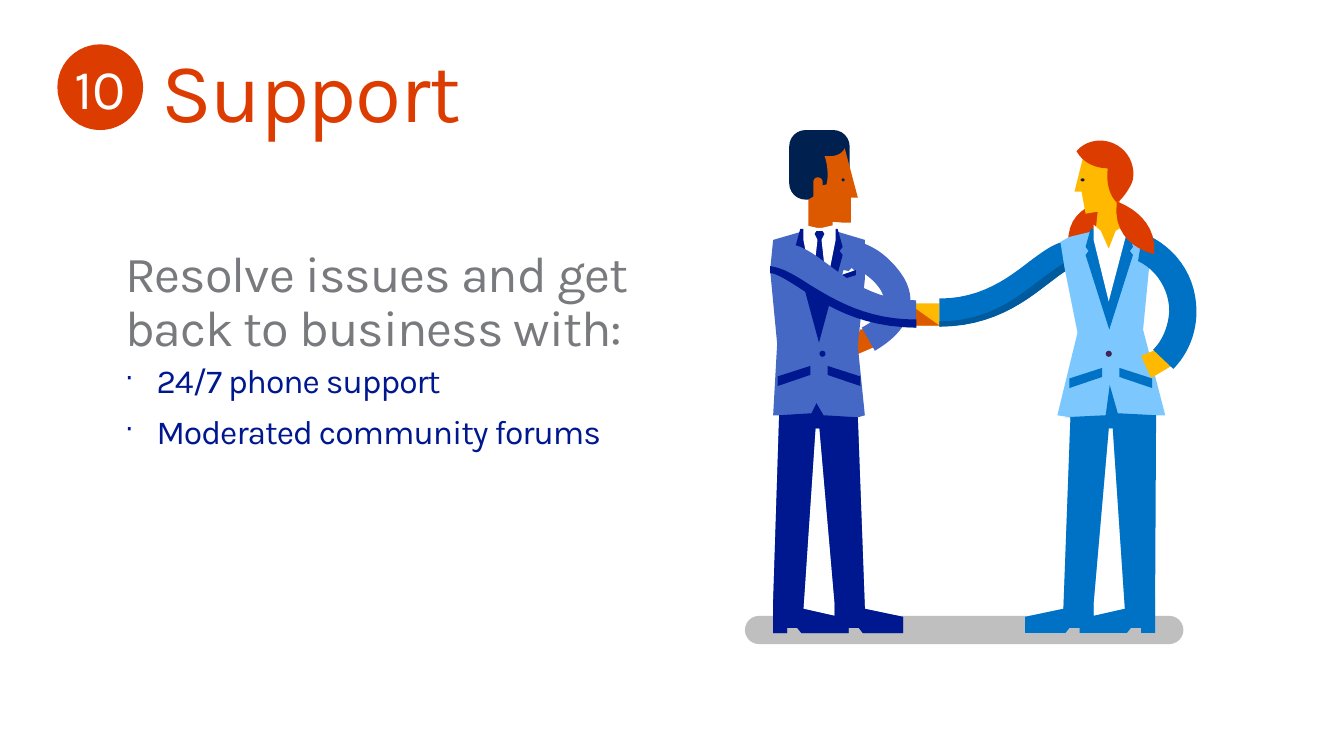
from collections import namedtuple
from dataclasses import dataclass

from lxml.etree import SubElement
from pptx import Presentation
from pptx.dml.color import RGBColor
from pptx.enum.shapes import MSO_SHAPE as Preset
from pptx.enum.text import MSO_ANCHOR as Anchor, PP_ALIGN as Align
from pptx.oxml.ns import qn
from pptx.util import Pt

Box = namedtuple("Box", "left top width height")


@dataclass(frozen=True)
class Theme:
    font: str = "Karla"
    title_size: int = 60
    badge_size: int = 40
    lead_size: int = 36
    item_size: int = 24
    red: str = "DC3C00"
    grey: str = "797A7D"
    floor: str = "BFBFBF"
    white: str = "FFFFFF"
    navy: str = "00188F"
    midnight: str = "002050"
    indigo: str = "4668C5"
    brown: str = "DD5900"
    gold: str = "FFB900"
    blue: str = "0072C6"
    deep_blue: str = "005A9E"
    sky: str = "7DC7FF"
    ink: str = "171A4E"
    plum: str = "442359"


THEME = Theme()
GRID_WIDTH = 500
CURVE_STEPS = 12
MIRROR_AXIS = 256.5
LEGS = [(67, 498), (67, 528), (81, 528), (81, 523), (91, 523), (95, 528), (142, 528), (142, 523),
        (152, 523), (156, 528), (196, 528), (196, 512), (158, 504), (151, 314)]
LEG_GAP = [(97, 504), (109, 325), (113, 325), (128, 498), (128, 511)]
SLEEVE_EDGE = [(0, 0), (50, 0, 82, 23, 104, 40), (115, 48, 124, 56, 130, 56)]
SLEEVE = [*SLEEVE_EDGE, (130, 83), (115, 83, 103, 74, 88, 63), (67, 47, 41, 27, 0, 27)]


def transform(outline, origin=(0, 0), scale=(1, 1)):
    return [tuple(origin[i % 2] + scale[i % 2] * value for i, value in enumerate(knots))
            for knots in outline]


def mirror(outline, axis):
    return transform(outline, (2 * axis, 0), (-1, 1))


def flatten(outline):
    points = []
    for knots in outline:
        if len(knots) == 2:
            points.append(knots)
            continue
        xs, ys = (points[-1][axis:axis + 1] + knots[axis::2] for axis in (0, 1))
        for step in range(1, CURVE_STEPS + 1):
            t = step / CURVE_STEPS
            weights = ((1 - t) ** 3, 3 * t * (1 - t) ** 2, 3 * t * t * (1 - t), t ** 3)
            points.append(tuple(sum(w * v for w, v in zip(weights, line)) for line in (xs, ys)))
    return points


def paint(shape, colour):
    shape.shadow.inherit = False
    shape.fill.solid()
    shape.fill.fore_color.rgb = RGBColor.from_string(colour)
    shape.line.fill.background()


class Sketch:
    def __init__(self, slide, box):
        self.shapes = slide.shapes
        self.box = box
        self.unit = box.width / GRID_WIDTH

    def locate(self, x, y):
        return Pt(self.box.left + x * self.unit), Pt(self.box.top + y * self.unit)

    def preset(self, colour, kind, left, top, width, height):
        shape = self.shapes.add_shape(kind, *self.locate(left, top),
                                      Pt(width * self.unit), Pt(height * self.unit))
        paint(shape, colour)
        return shape

    def outline(self, colour, *contours):
        first, *others = [[self.locate(*point) for point in flatten(c)] for c in contours]
        builder = self.shapes.build_freeform(*first[0])
        builder.add_line_segments(first[1:])
        for contour in others:
            builder.move_to(*contour[0])
            builder.add_line_segments(contour[1:])
        paint(builder.convert_to_shape(), colour)


def draw_lapels(sketch, colour, axis, tip):
    half = [(axis - 18.5, 127), (axis - 23.5, 145), (axis - 20.5, 149), (axis - 23.5, 153)]
    sketch.outline(colour, [*half, (axis, tip), *reversed(mirror(half, axis))])


def draw_pockets(sketch, colour, axis, top):
    outer, inner = axis - 41, axis - 8.5
    flap = [(outer, top + 20), (inner, top + 9), (inner, top), (outer, top + 10.5)]
    for side in (flap, mirror(flap, axis)):
        sketch.outline(colour, side)


def draw_button(sketch, colour, centre):
    sketch.preset(colour, Preset.OVAL, centre - 3, 248, 6, 6)


def draw_man(sketch):
    axis = 112.5
    hair = sketch.preset(THEME.midnight, Preset.ROUNDED_RECTANGLE, 83, 29, 60, 69)
    hair.adjustments[0] = 0.27
    ear = [(116, 84), (116, 80), (116, 78, 114, 76, 111, 76), (109, 76, 107, 78, 107, 80)]
    face = [(138, 47), (136, 52, 130, 55, 123, 55), (118, 55), (121, 62, 122, 75, 120, 83)]
    neck_and_nose = [(107, 95), (102, 98), (102, 131), (126, 131), (126, 120), (137, 121),
                     (144, 121), (144, 96), (151, 96)]
    sketch.outline(THEME.brown, face + ear + neck_and_nose)
    sketch.preset(THEME.midnight, Preset.OVAL, 135, 77, 3, 3)

    hip_hand = [(168, 244), (147, 253), (153, 227), (168, 225)]
    sketch.outline(THEME.brown, hip_hand)
    jacket = [(158, 312), (151, 243), (158, 177), (158, 138), (128, 129), (98, 129),
              (67, 138), (64, 168), (71, 241), (67, 312), (73, 312)]
    sketch.outline(THEME.indigo, LEGS + jacket, LEG_GAP)
    waist = [(117, 312), (110, 300), (105, 310), (73, 312)]
    sketch.outline(THEME.navy, LEGS + waist, LEG_GAP)

    draw_lapels(sketch, THEME.navy, axis, 240)
    handkerchief = [(135, 175), (137, 168), (142, 169), (145, 166), (148, 169), (141, 173)]
    breast_pocket = [(120, 178), (149, 168), (149, 173), (120, 182)]
    sketch.outline(THEME.white, handkerchief)
    sketch.outline(THEME.navy, breast_pocket)
    draw_pockets(sketch, THEME.navy, axis, 263)
    draw_button(sketch, THEME.navy, 116)

    bent_arm = [(168, 248), (155, 225), (172, 216, 179, 206, 177, 196),
                (174, 180, 151, 166, 146, 166), (136, 141), (147, 136, 160, 142, 170, 148),
                (181, 155, 191, 166, 197, 176), (204, 188, 205, 201, 201, 213),
                (196, 227, 185, 238, 168, 248)]
    sketch.outline(THEME.indigo, bent_arm)
    shirt_half = [(110, 126), (97, 123), (97, 138), (106, 183), (111, 138), (108, 132), (110, 129)]
    sketch.outline(THEME.white, shirt_half + mirror(shirt_half, 113)[::-1])

    cuff = (209, 225)
    underside = [(145, 61), (145, 54), (139, 54, 128, 47, 117, 40), (91, 23, 56, 0, 0, 0),
                 (0, 8), (49, 8, 80, 27, 105, 42), (119, 51, 131, 59, 145, 61)]
    for colour, part in ((THEME.indigo, SLEEVE), (THEME.navy, underside)):
        sketch.outline(colour, transform(part, cuff, (-1, -1)))


def draw_woman(sketch):
    axis = 400.5
    ponytail_tip = [(360, 143), (357, 104, 396, 100, 396, 100), (399, 140, 360, 143, 360, 143)]
    sketch.outline(THEME.red, ponytail_tip)

    cuff, sleeve_scale = (232, 224), (1.02, -1.03)
    underside = [*SLEEVE_EDGE, (130, 65), (119, 61, 109, 53, 99, 46), (75, 27, 46, 5, 0, 5)]
    for colour, part in ((THEME.blue, SLEEVE), (THEME.deep_blue, underside)):
        sketch.outline(colour, transform(part, cuff, sleeve_scale))

    legs, leg_gap = mirror(LEGS, MIRROR_AXIS), mirror(LEG_GAP, MIRROR_AXIS)
    jacket = [(349, 312), (369, 230), (356, 165), (352, 140), (361, 135), (386, 129),
              (415, 129), (443, 135), (434, 227), (456, 312), (440, 312)]
    sketch.outline(THEME.sky, legs + jacket, leg_gap)
    hip_hand = [(464, 262), (442, 275), (432, 253), (454, 244)]
    sketch.outline(THEME.gold, hip_hand)
    face_and_neck = [(415, 81), (415, 59, 397, 50, 376, 50), (366, 90), (373, 90), (377, 112),
                     (389, 110), (387, 129), (397, 172), (411, 129), (411, 98),
                     (414, 93, 415, 87, 415, 81)]
    sketch.outline(THEME.gold, face_and_neck)
    sketch.preset(THEME.ink, Preset.OVAL, 372, 77, 4, 3)
    waist = [(356, 314), (397, 312), (401, 282), (409, 310), (447, 312)]
    sketch.outline(THEME.blue, legs + waist, leg_gap)

    neckline = [(377, 145), (382, 127), (387, 127), (400, 170), (411, 127), (419, 127), (424, 145),
                (421, 149), (424, 153), (axis, 227), (377, 153), (380, 149)]
    sketch.outline(THEME.blue, neckline)
    shirt = [(407, 129), (400, 147), (392, 129), (385, 123), (385, 138), (400, 199),
             (416, 138), (421, 121)]
    sketch.outline(THEME.white, shirt)
    bent_arm = [(464, 266), (444, 247), (454, 237, 459, 223, 460, 209),
                (460, 188, 448, 168, 429, 159), (433, 135), (444, 136),
                (471, 151, 487, 178, 487, 209), (487, 230, 479, 251, 464, 266)]
    sketch.outline(THEME.blue, bent_arm)
    draw_pockets(sketch, THEME.blue, 402, 265)
    draw_button(sketch, THEME.plum, 400)

    fringe = [(368, 50), (375, 42, 386, 38, 397, 40), (415, 43, 427, 60, 424, 78),
              (423, 84, 413, 99, 408, 101), (408, 101, 396, 91, 399, 67),
              (399, 67, 378, 68, 368, 50)]
    ponytail = [(408, 100), (408, 100, 449, 113, 445, 152), (445, 152, 402, 144, 408, 100)]
    for hair in (fringe, ponytail):
        sketch.outline(THEME.red, hair)


def add_handshake_scene(slide, box):
    sketch = Sketch(slide, box)
    ground = sketch.preset(THEME.floor, Preset.ROUNDED_RECTANGLE, 39, 511, 435, 28)
    ground.adjustments[0] = 0.5
    sketch.preset(THEME.gold, Preset.RECTANGLE, 208, 201, 24, 22)
    sketch.outline(THEME.brown, [(232, 223), (208, 223), (208, 206)])
    draw_woman(sketch)
    draw_man(sketch)


def style(paragraph, size, colour, tracking=0):
    paragraph.font.name = THEME.font
    paragraph.font.size = Pt(size)
    paragraph.font.color.rgb = RGBColor.from_string(colour)
    for run in paragraph.runs:
        run._r.get_or_add_rPr().set("spc", str(round(tracking * 100)))


def clear_margins(frame):
    frame.word_wrap = True
    frame.margin_left = frame.margin_right = frame.margin_top = frame.margin_bottom = 0


def add_text_frame(slide, box):
    frame = slide.shapes.add_textbox(*map(Pt, box)).text_frame
    clear_margins(frame)
    return frame


def add_heading(slide, box, number, title):
    diameter, indent = 61.2, 74.2
    badge = slide.shapes.add_shape(Preset.OVAL, *map(Pt, (box.left, box.top, diameter, diameter)))
    paint(badge, THEME.red)
    clear_margins(badge.text_frame)
    badge.text_frame.vertical_anchor = Anchor.MIDDLE
    numeral = badge.text_frame.paragraphs[0]
    numeral.text, numeral.alignment = number, Align.CENTER
    style(numeral, THEME.badge_size, THEME.white)
    frame = add_text_frame(slide, Box(box.left + indent, box.top + 4.3, box.width - indent, 59))
    heading = frame.paragraphs[0]
    heading.text, heading.line_spacing = title, 0.9
    style(heading, THEME.title_size, THEME.red, -1)


def add_benefits(slide, box, lead_text, items):
    frame = add_text_frame(slide, box)
    lead = frame.paragraphs[0]
    lead.text, lead.line_spacing = lead_text, 0.9
    style(lead, THEME.lead_size, THEME.grey, -0.7)
    for item in items:
        benefit = frame.add_paragraph()
        benefit.text, benefit.line_spacing = item, 0.9
        benefit.space_before, benefit.space_after = Pt(4.8), Pt(6)
        properties = benefit._p.get_or_add_pPr()
        properties.set("marL", str(Pt(22.5)))
        properties.set("indent", str(-Pt(22.5)))
        SubElement(properties, qn("a:buSzPct")).set("val", "80000")
        SubElement(properties, qn("a:buChar")).set("char", "·")
        style(benefit, THEME.item_size, THEME.navy, -0.7)


def main():
    deck = Presentation()
    deck.slide_width, deck.slide_height = Pt(960), Pt(540)
    slide = deck.slides.add_slide(deck.slide_layouts[6])
    add_heading(slide, Box(41, 31.7, 859, 63.3), "10", "Support")
    add_benefits(slide, Box(89.3, 177.8, 402.5, 139.7),
                 "Resolve issues and get\vback to business with:",
                 ["24/7 phone support", "Moderated community forums"])
    add_handshake_scene(slide, Box(504, 72, 360, 396))
    deck.save("out.pptx")


if __name__ == "__main__":
    main()
